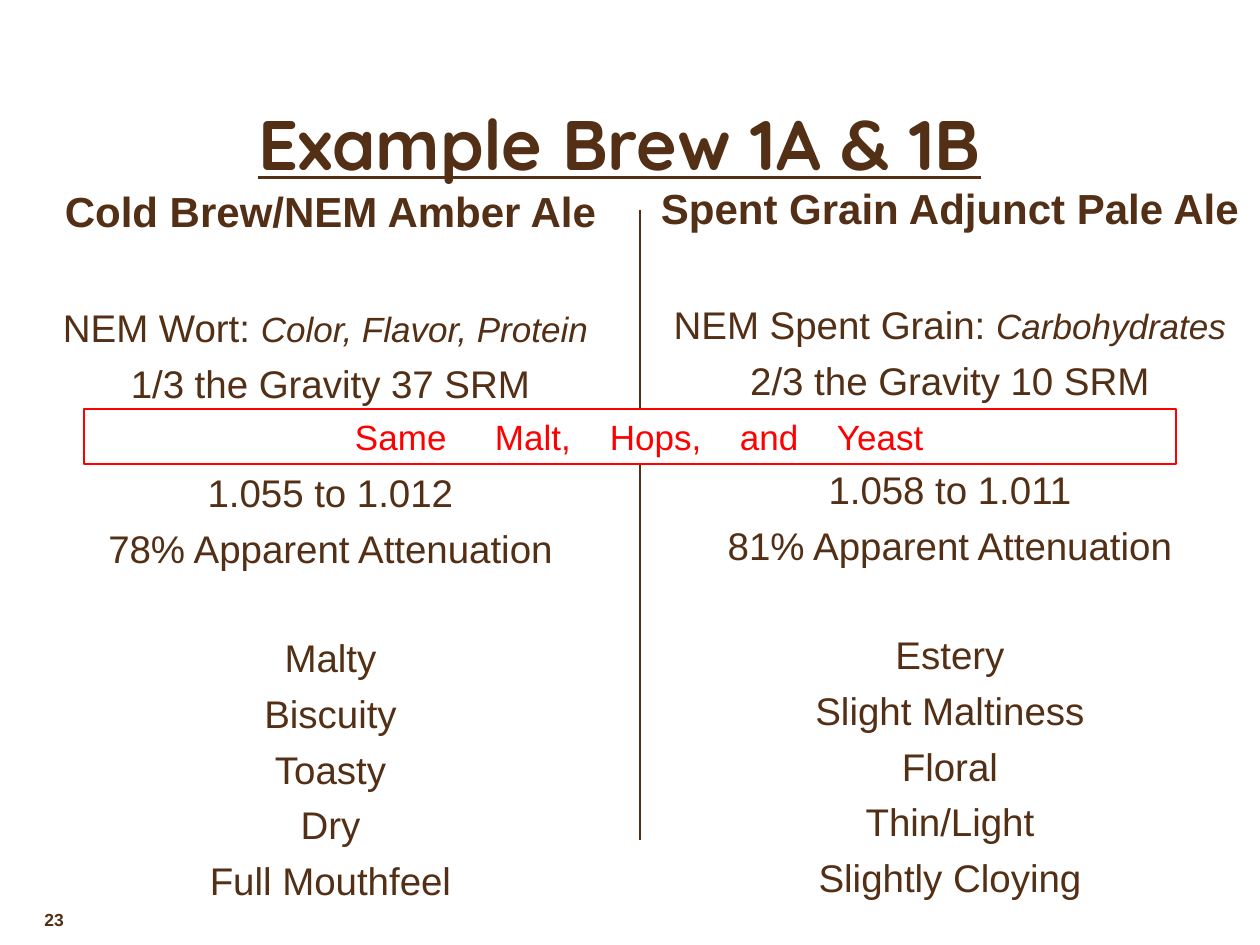
from lxml.etree import SubElement
from pptx import Presentation
from pptx.dml.color import RGBColor
from pptx.enum.shapes import MSO_CONNECTOR, MSO_SHAPE
from pptx.enum.text import MSO_ANCHOR, MSO_AUTO_SIZE, PP_ALIGN
from pptx.oxml.ns import qn
from pptx.util import Emu, Pt

PX = 914400 // 126
BROWN = RGBColor(0x52, 0x2F, 0x15)
RED = RGBColor(0xFF, 0x00, 0x00)
WHITE = RGBColor(0xFF, 0xFF, 0xFF)
BODY_FONT = "Arial"
TITLE_FONT = "Quicksand"

LINE_GAP = 5.5
SOURCE_GAP = 39
GROUP_GAP = 36

# Each column: heading, source, what it brings, gravity, fermentation, flavours
LEFT_COLUMN = (
    "Cold Brew/NEM Amber Ale",
    "NEM Wort: ", "Color, Flavor, Protein ",
    "1/3 the Gravity 37 SRM",
    ["1.055 to 1.012", "78% Apparent Attenuation"],
    ["Malty", "Biscuity", "Toasty", "Dry", "Full Mouthfeel"],
)
RIGHT_COLUMN = (
    "Spent Grain Adjunct Pale Ale",
    "NEM Spent Grain: ", "Carbohydrates",
    "2/3 the Gravity 10 SRM",
    ["1.058 to 1.011", "81% Apparent Attenuation"],
    ["Estery", "Slight Maltiness", "Floral", "Thin/Light", "Slightly Cloying"],
)
BANNER_WORDS = ["Same", "Malt,", "Hops,", "and", "Yeast"]
BANNER_TABS = [140, 255, 385, 482]


def px(length):
    return Emu(length * PX)


def place(shape, left, top, width, height):
    shape.left, shape.top = px(left), px(top)
    shape.width, shape.height = px(width), px(height)


def style(font, size, color=BROWN, name=BODY_FONT, bold=False, italic=False):
    font.size = Pt(size)
    font.color.rgb = color
    font.name = name
    font.bold = bold
    font.italic = italic


def prepare_frame(shape):
    frame = shape.text_frame
    frame.word_wrap = True
    frame.auto_size = MSO_AUTO_SIZE.NONE
    frame.vertical_anchor = MSO_ANCHOR.TOP
    return frame


def fill_title(title):
    place(title, 84, 94, 1071, 116)
    frame = prepare_frame(title)
    frame.text = "Example Brew 1A & 1B"
    paragraph = frame.paragraphs[0]
    paragraph.alignment = PP_ALIGN.CENTER
    font = paragraph.runs[0].font
    style(font, 40, name=TITLE_FONT, bold=True)
    font.underline = True


def add_line(frame, text, gap, size=22, bold=False):
    """Append a centred paragraph without a bullet."""
    paragraph = frame.add_paragraph() if frame.text else frame.paragraphs[0]
    paragraph.text = text
    properties = paragraph._p.get_or_add_pPr()
    properties.set("marL", "0")
    properties.set("indent", "0")
    SubElement(properties, qn("a:buNone"))
    paragraph.alignment = PP_ALIGN.CENTER
    paragraph.space_before = Pt(gap)
    style(paragraph.runs[0].font, size, bold=bold)
    return paragraph


def fill_column(body, column):
    heading, source, contribution, gravity, fermentation, flavours = column
    frame = prepare_frame(body)
    add_line(frame, heading, 0, size=24, bold=True)
    paragraph = add_line(frame, source, SOURCE_GAP)
    run = paragraph.add_run()
    run.text = contribution
    style(run.font, 20, italic=True)
    add_line(frame, gravity, LINE_GAP)
    for group in (fermentation, flavours):
        for index, text in enumerate(group):
            add_line(frame, text, LINE_GAP if index else GROUP_GAP)


def add_divider(slide):
    line = slide.shapes.add_connector(
        MSO_CONNECTOR.STRAIGHT, px(640), px(210), px(640), px(840))
    line.line.color.rgb = BROWN
    line.line.width = Pt(1.25)
    SubElement(line._element.spPr, qn("a:effectLst"))


def add_banner(slide):
    banner = slide.shapes.add_shape(
        MSO_SHAPE.RECTANGLE, px(84), px(409), px(1092), px(55))
    banner.shadow.inherit = False
    banner.fill.solid()
    banner.fill.fore_color.rgb = WHITE
    banner.line.color.rgb = RED
    banner.line.width = Pt(0.75)
    frame = prepare_frame(banner)
    frame.vertical_anchor = MSO_ANCHOR.MIDDLE
    frame.margin_left = px(271)
    paragraph = frame.paragraphs[0]
    paragraph.text = "\t".join(BANNER_WORDS)
    paragraph.alignment = PP_ALIGN.LEFT
    tabs = SubElement(paragraph._p.get_or_add_pPr(), qn("a:tabLst"))
    for position in BANNER_TABS:
        SubElement(tabs, qn("a:tab"), pos=str(px(position)), algn="l")
    style(paragraph.runs[0].font, 20, color=RED)


def add_page_number(slide):
    box = slide.shapes.add_textbox(px(32), px(903), px(262), px(42))
    frame = prepare_frame(box)
    frame.text = "23"
    style(frame.paragraphs[0].runs[0].font, 10, bold=True)


def main():
    presentation = Presentation()
    presentation.slide_width, presentation.slide_height = px(1260), px(945)
    slide = presentation.slides.add_slide(presentation.slide_layouts[3])
    title, left_body, right_body = slide.placeholders
    fill_title(title)
    place(left_body, 0, 179, 661, 719)
    fill_column(left_body, LEFT_COLUMN)
    place(right_body, 640, 176, 620, 719)
    fill_column(right_body, RIGHT_COLUMN)
    add_divider(slide)
    add_banner(slide)
    add_page_number(slide)
    presentation.save("out.pptx")


if __name__ == "__main__":
    main()
